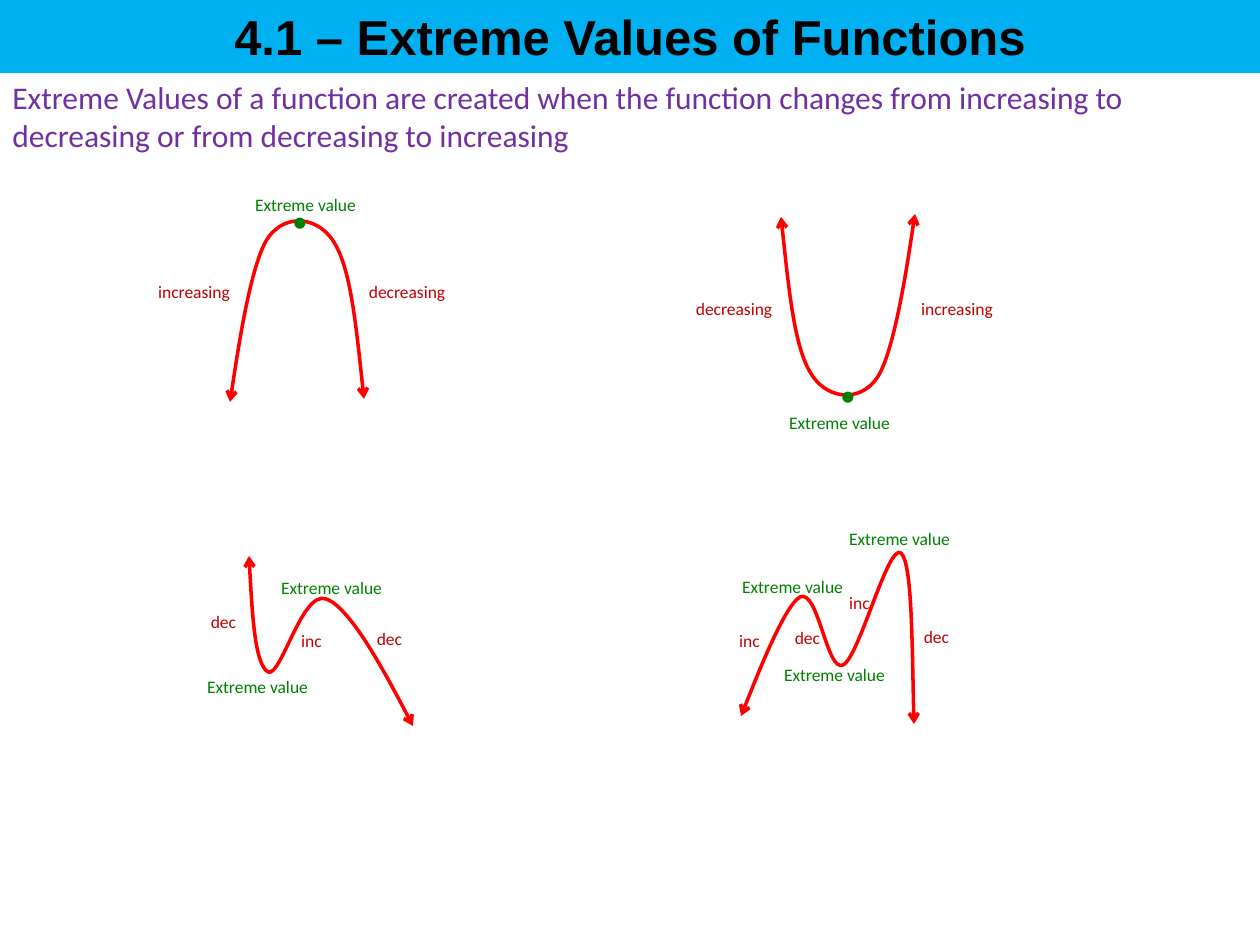
from dataclasses import dataclass

from lxml import etree
from pptx import Presentation
from pptx.dml.color import RGBColor
from pptx.enum.shapes import MSO_SHAPE
from pptx.enum.text import MSO_ANCHOR, PP_ALIGN
from pptx.oxml.ns import qn
from pptx.util import Pt

RECTANGLE = MSO_SHAPE.RECTANGLE
MIDDLE, TOP = MSO_ANCHOR.MIDDLE, MSO_ANCHOR.TOP
LEFT, CENTER = PP_ALIGN.LEFT, PP_ALIGN.CENTER
EMU_PER_PX = 914400 / 126
BEZIER_STEPS = 40


@dataclass(frozen=True)
class Theme:
    banner: RGBColor = RGBColor(0x00, 0xB0, 0xF0)
    title: RGBColor = RGBColor(0x00, 0x00, 0x00)
    statement: RGBColor = RGBColor(0x70, 0x30, 0xA0)
    curve: RGBColor = RGBColor(0xFF, 0x00, 0x00)
    extreme: RGBColor = RGBColor(0x00, 0x80, 0x00)
    trend: RGBColor = RGBColor(0xC0, 0x00, 0x00)
    title_font: str = "Arial"
    body_font: str = "Calibri"
    title_size: int = 28
    body_size: int = 18
    label_size: int = 10
    curve_width: float = 2


THEME = Theme()

# Each curve: a start point, then two controls and an end point per segment
VALLEY = [(781, 217), (788, 281), (794, 345), (810, 372), (825, 399),
          (859, 404), (877, 378), (895, 352), (915, 214), (915, 214)]
HILL = [(1145 - x, 616 - y) for x, y in VALLEY]  # the valley turned by 180°
FALL_RISE_FALL = [(249, 556), (252, 610), (255, 664), (268, 672), (281, 678),
                  (302, 590), (326, 599), (352, 607), (413, 726), (413, 726)]
TWO_PEAKS = [(914, 724), (912, 644), (912, 563), (901, 553), (888, 543),
             (859, 658), (843, 665), (827, 673), (818, 588), (800, 597),
             (784, 606), (741, 716), (741, 716)]

# Each kind of label: width, height, size, colour
LABEL_STYLES = {
    "Extreme value": (139, 34, THEME.label_size, THEME.extreme),
    "increasing": (108, 34, THEME.label_size, THEME.trend),
    "decreasing": (108, 34, THEME.label_size, THEME.trend),
    "inc": (53, 34, THEME.label_size, THEME.trend),
    "dec": (53, 34, THEME.label_size, THEME.trend),
    "•": (42, 50, THEME.body_size, THEME.extreme),
}

# Each graph: its curve and the left and top of its labels
GRAPHS = [
    (VALLEY, [("increasing", 903, 292), ("Extreme value", 770, 406),
              ("decreasing", 680, 292), ("•", 827, 369)]),
    (HILL, [("Extreme value", 236, 188), ("decreasing", 353, 275),
            ("increasing", 140, 275), ("•", 279, 195)]),
    (TWO_PEAKS, [("inc", 723, 624), ("dec", 781, 621), ("inc", 833, 586),
                 ("dec", 910, 620), ("Extreme value", 723, 570),
                 ("Extreme value", 765, 658), ("Extreme value", 830, 522)]),
    (FALL_RISE_FALL, [("dec", 363, 622), ("dec", 197, 605), ("inc", 285, 624),
                      ("Extreme value", 262, 571),
                      ("Extreme value", 188, 670)]),
]


def px(length):
    return round(length * EMU_PER_PX)


def write(shape, text, size, font_name, color, align, anchor=TOP, bold=False):
    frame = shape.text_frame
    frame.word_wrap = True
    frame.vertical_anchor = anchor
    paragraph = frame.paragraphs[0]
    paragraph.text = text
    paragraph.alignment = align
    font = paragraph.font
    font.size, font.name, font.bold = Pt(size), font_name, bold
    font.color.rgb = color


def add_banner(slide, title):
    banner = slide.shapes.add_shape(RECTANGLE, 0, 0, px(1260), px(72))
    banner.shadow.inherit = False
    banner.fill.solid()
    banner.fill.fore_color.rgb = THEME.banner
    banner.line.color.rgb = THEME.banner
    banner.line.width = Pt(0.75)
    write(banner, title, THEME.title_size, THEME.title_font, THEME.title,
          CENTER, MIDDLE, bold=True)


def add_text(slide, text, box, size, color, align):
    textbox = slide.shapes.add_textbox(*map(px, box))
    write(textbox, text, size, THEME.body_font, color, align)


def add_label(slide, text, left, top):
    width, height, size, color = LABEL_STYLES[text]
    add_text(slide, text, (left, top, width, height), size, color, CENTER)


def bezier_point(controls, t):
    weights = ((1 - t) ** 3, 3 * t * (1 - t) ** 2, 3 * t * t * (1 - t), t ** 3)
    return tuple(round(sum(w * p[axis] for w, p in zip(weights, controls)))
                 for axis in (0, 1))


def add_curve(slide, knots):
    points = [(px(x), px(y)) for x, y in knots]
    starts = range(0, len(points) - 1, 3)

    # Points along the curve give the outline its true bounds
    samples = [bezier_point(points[i:i + 4], step / BEZIER_STEPS)
               for i in starts for step in range(1, BEZIER_STEPS + 1)]
    builder = slide.shapes.build_freeform(*points[0])
    builder.add_line_segments(samples, close=False)
    curve = builder.convert_to_shape()

    # Swap the straight pieces for cubic segments
    outline = next(curve.element.iter(qn("a:path")))
    for piece in outline.findall(qn("a:lnTo")):
        outline.remove(piece)
    for i in starts:
        segment = etree.SubElement(outline, qn("a:cubicBezTo"))
        for x, y in points[i + 1:i + 4]:
            etree.SubElement(segment, qn("a:pt"), x=str(x - curve.left),
                             y=str(y - curve.top))

    curve.shadow.inherit = False
    curve.fill.background()
    curve.line.color.rgb = THEME.curve
    curve.line.width = Pt(THEME.curve_width)
    line = curve.element.spPr.find(qn("a:ln"))
    for end in ("a:headEnd", "a:tailEnd"):
        etree.SubElement(line, qn(end), type="arrow")


def main():
    deck = Presentation()
    deck.slide_width, deck.slide_height = px(1260), px(945)
    slide = deck.slides.add_slide(deck.slide_layouts[6])

    # Heading and statement
    add_banner(slide, "4.1 – Extreme Values of Functions")
    add_text(slide, "Extreme Values of a function are created when the "
             "function changes from increasing to decreasing or from "
             "decreasing to increasing",
             (0, 72, 1260, 89), THEME.body_size, THEME.statement, LEFT)

    # Graphs with their labels
    for knots, labels in GRAPHS:
        add_curve(slide, knots)
        for label in labels:
            add_label(slide, *label)

    deck.save("out.pptx")


if __name__ == "__main__":
    main()
